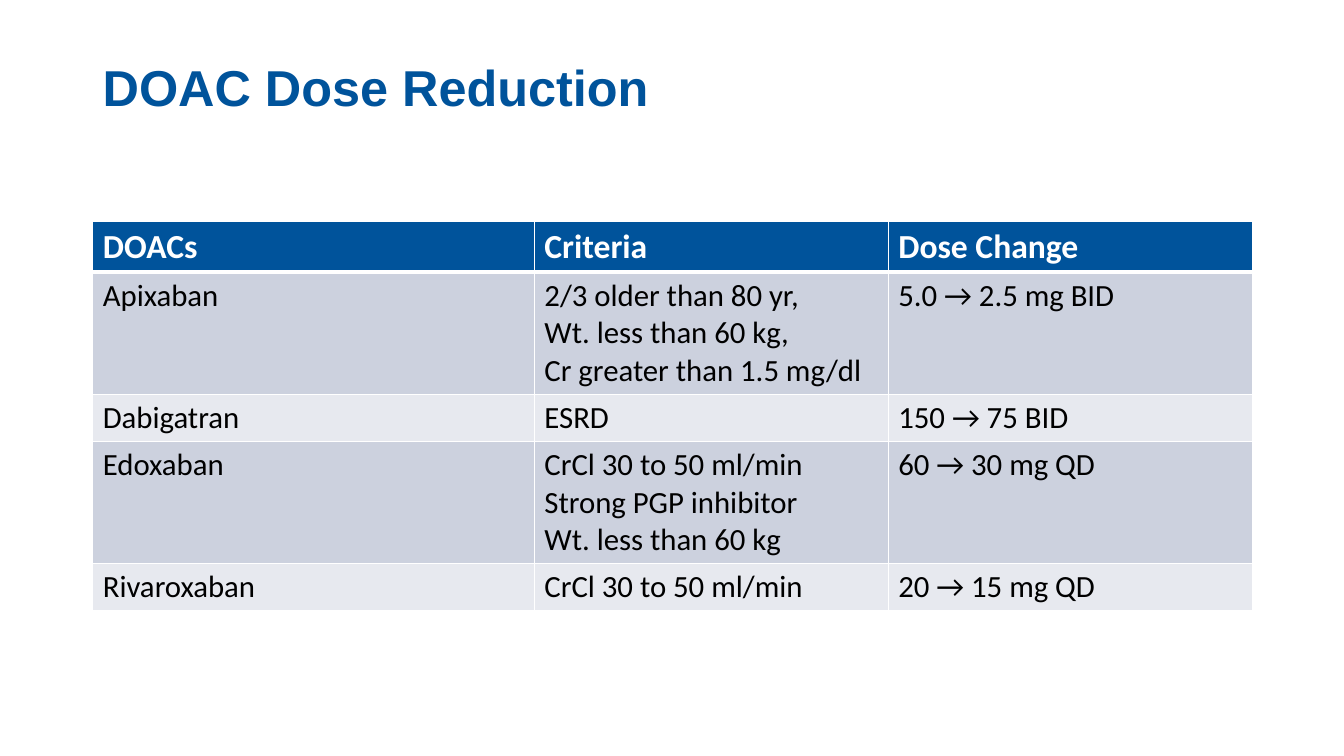
from dataclasses import dataclass

from lxml import etree
from pptx import Presentation
from pptx.dml.color import RGBColor
from pptx.enum.text import MSO_ANCHOR
from pptx.oxml.ns import qn
from pptx.util import Pt

EMU_PER_PX = 9144
ANCHOR_BOTTOM = MSO_ANCHOR.BOTTOM
BORDER_TAGS = ("a:lnL", "a:lnR", "a:lnT", "a:lnB")


@dataclass(frozen=True)
class Theme:
    blue: str = "00539B"
    white: str = "FFFFFF"
    black: str = "000000"
    bands: tuple = ("CCD1DE", "E7E9EF")
    title_font: str = "Arial"
    table_font: str = "Calibri"
    title_size: int = 36
    header_size: int = 24
    body_size: int = 22
    border: int = 1
    header_border: int = 3


def px(length):
    return length * EMU_PER_PX


class SlideBuilder:
    """Draws styled elements on the current slide."""

    def __init__(self, slide, theme):
        self.slide = slide
        self.theme = theme

    def style_text(self, text_frame, font_name, size, color, bold):
        for paragraph in text_frame.paragraphs:
            for run in paragraph.runs:
                run.font.name = font_name
                run.font.size = Pt(size)
                run.font.bold = bold
                run.font.color.rgb = RGBColor.from_string(color)

    def title(self, text, left, top, width, height):
        shape = self.slide.shapes.add_textbox(px(left), px(top), px(width), px(height))
        text_frame = shape.text_frame
        text_frame.word_wrap = True
        text_frame.vertical_anchor = ANCHOR_BOTTOM
        text_frame.text = text
        text_frame.paragraphs[0].line_spacing = 0.9
        theme = self.theme
        self.style_text(text_frame, theme.title_font, theme.title_size, theme.blue, True)

    def borders(self, cell, row_index):
        theme = self.theme
        thick_tag = {0: "a:lnB", 1: "a:lnT"}.get(row_index)
        properties = cell._tc.get_or_add_tcPr()
        for tag in BORDER_TAGS:
            width = theme.header_border if tag == thick_tag else theme.border
            line = etree.SubElement(properties, qn(tag), w=str(Pt(width)))
            fill = etree.SubElement(line, qn("a:solidFill"))
            etree.SubElement(fill, qn("a:srgbClr"), val=theme.white)

    def cell(self, cell, text, row_index):
        theme = self.theme
        header = row_index == 0
        self.borders(cell, row_index)
        cell.fill.solid()
        color = theme.blue if header else theme.bands[(row_index - 1) % 2]
        cell.fill.fore_color.rgb = RGBColor.from_string(color)
        cell.text_frame.text = text
        size = theme.header_size if header else theme.body_size
        text_color = theme.white if header else theme.black
        self.style_text(cell.text_frame, theme.table_font, size, text_color, header)

    def table(self, rows, left, top, column_widths, row_heights):
        table = self.slide.shapes.add_table(
            len(rows), len(column_widths), px(left), px(top),
            px(sum(column_widths)), px(sum(row_heights))).table
        for column, width in zip(table.columns, column_widths):
            column.width = px(width)
        for row_index, texts in enumerate(rows):
            table.rows[row_index].height = px(row_heights[row_index])
            for column_index, text in enumerate(texts):
                self.cell(table.cell(row_index, column_index), text, row_index)


DOSE_ROWS = [
    ("DOACs", "Criteria", "Dose Change"),
    ("Apixaban",
     "2/3 older than 80 yr,\vWt. less than 60 kg,\nCr greater than 1.5 mg/dl",
     "5.0 → 2.5 mg BID"),
    ("Dabigatran", "ESRD", "150 → 75 BID"),
    ("Edoxaban",
     "CrCl 30 to 50 ml/min\nStrong PGP inhibitor\nWt. less than 60 kg",
     "60 → 30 mg QD"),
    ("Rivaroxaban", "CrCl 30 to 50 ml/min", "20 → 15 mg QD"),
]


def main():
    presentation = Presentation()
    presentation.slide_width = px(1333)
    presentation.slide_height = px(750)
    slide = presentation.slides.add_slide(presentation.slide_layouts[6])
    builder = SlideBuilder(slide, Theme())
    builder.title("DOAC Dose Reduction", 92, 0, 1150, 121)
    builder.table(DOSE_ROWS, 92, 220, (438, 351, 361), (50, 121, 47, 121, 47))
    presentation.save("out.pptx")


if __name__ == "__main__":
    main()
